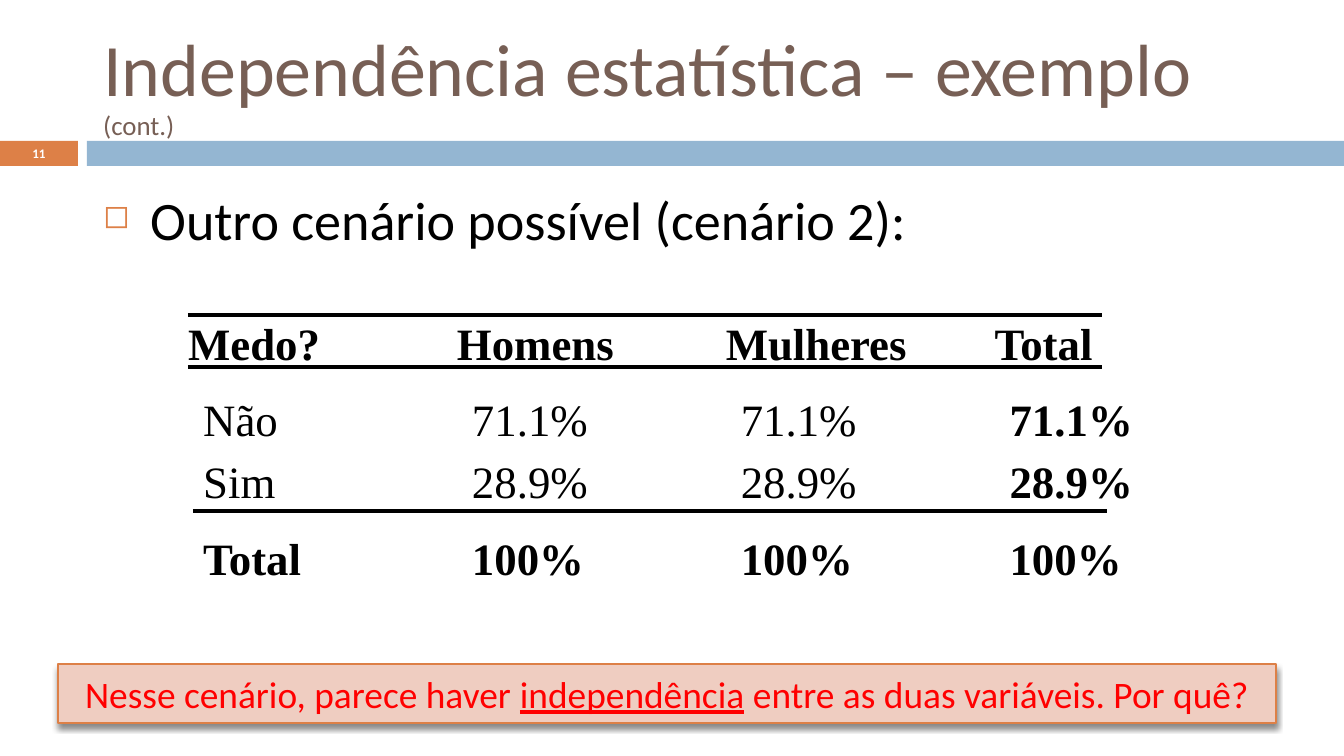
import pptx
import pptx.util
import pptx.dml.color
import pptx.enum.shapes
import pptx.enum.text
import pptx.oxml
import pptx.oxml.ns
from dataclasses import dataclass


@dataclass(frozen=True)
class Theme:
    sans: str = "Calibri"
    serif: str = "Times New Roman"
    title: str = "775F55"
    accent: str = "DD8047"
    band: str = "94B6D2"
    callout: str = "EFCDC1"
    alert: str = "FF0000"
    ink: str = "000000"
    white: str = "FFFFFF"
    title_size: float = 39.6
    cont_size: float = 14.4
    body_size: float = 29
    table_size: float = 24
    callout_size: float = 20
    number_size: float = 7


T = Theme()
PX = 914400 / 134.4
NS = 'xmlns:a="http://schemas.openxmlformats.org/drawingml/2006/main"'
ANCHOR = pptx.enum.text.MSO_ANCHOR
CENTER = pptx.enum.text.PP_ALIGN.CENTER


def box(x, y, w, h, fill=None, top=7):
    at = [round(v * PX) for v in (x, y, w, h)]
    if fill:
        sp = s.shapes.add_shape(pptx.enum.shapes.MSO_SHAPE.RECTANGLE, *at)
        sp.shadow.inherit = False
        sp.fill.solid()
        sp.fill.fore_color.rgb = pptx.dml.color.RGBColor.from_string(fill)
        sp.line.fill.background()
    else:
        sp = s.shapes.add_textbox(*at)
    tf = sp.text_frame
    tf.word_wrap = True
    tf.vertical_anchor = ANCHOR.TOP
    tf.margin_top = round(top * PX)
    return sp


def write(p, text, font, size, color, bold=False):
    r = p.add_run()
    r.text = text
    r.font.name = font
    r.font.size = pptx.util.Pt(size)
    r.font.bold = bold
    r.font.color.rgb = pptx.dml.color.RGBColor.from_string(color)
    return r


prs = pptx.Presentation()
prs.slide_width = round(1344 * PX)
prs.slide_height = round(756 * PX)
s = prs.slides.add_slide(prs.slide_layouts[6])

box(0, 141, 78, 25, T.accent)
box(87, 141, 1257, 25, T.band)

p = box(90, 26, 1199, 109).text_frame.paragraphs[0]
p.line_spacing = 0.9
write(p, "Independência estatística – exemplo ", T.sans, T.title_size, T.title)
write(p, "(cont.)", T.sans, T.cont_size, T.title)

tf = box(0, 140, 78, 27).text_frame
tf.vertical_anchor = ANCHOR.MIDDLE
p = tf.paragraphs[0]
p.alignment = CENTER
write(p, "11", T.sans, T.number_size, T.white, True)

p = box(90, 176, 1199, 496, top=10).text_frame.paragraphs[0]
write(p, "Outro cenário possível (cenário 2):", T.sans, T.body_size, T.ink)
pPr = p._p.get_or_add_pPr()
pPr.set("marL", str(round(47 * PX)))
pPr.set("indent", str(round(-47 * PX)))
for xml in (
    f'<a:buClr {NS}><a:srgbClr val="{T.accent}"/></a:buClr>',
    f'<a:buSzPct {NS} val="60000"/>',
    f'<a:buChar {NS} char="◻"/>',
):
    pPr.append(pptx.oxml.parse_xml(xml))

header = [[("Medo?\t\tHomens\tMulheres\tTotal", True)]]
rows = [
    [("Não\t\t71.1%\t\t71.1%\t\t", False), ("71.1%", True)],
    [("Sim\t\t28.9%\t\t28.9%\t\t", False), ("28.9%", True)],
    [("Total\t\t100%\t\t100%\t\t100%", True)],
]
for at, lines in (((175, 304, 1008, 67), header), ((190, 394, 966, 198), rows)):
    tf = box(*at, top=12).text_frame
    for i, parts in enumerate(lines):
        p = tf.add_paragraph() if i else tf.paragraphs[0]
        p.line_spacing = 0.7 if len(parts) > 1 else 1.0
        p.space_before = pptx.util.Pt(13.3 if i else 0)
        p._p.get_or_add_pPr().set("defTabSz", "914400")
        for text, bold in parts:
            write(p, text, T.serif, T.table_size, T.ink, bold)

for x, y in ((188, 367), (188, 315), (193, 511)):
    ends = [round(v * PX) for v in (x, y, x + 914, y)]
    line = s.shapes.add_connector(pptx.enum.shapes.MSO_CONNECTOR.STRAIGHT, *ends)
    line.line.color.rgb = pptx.dml.color.RGBColor.from_string(T.ink)
    line.line.width = pptx.util.Pt(2.25)
    line._element.spPr.append(pptx.oxml.parse_xml(f"<a:effectLst {NS}/>"))

sp = box(58, 664, 1218, 59, T.callout)
sp.line.color.rgb = pptx.dml.color.RGBColor.from_string(T.accent)
sp.line.width = pptx.util.Pt(0.79)
sp._element.spPr.find(pptx.oxml.ns.qn("a:effectLst")).append(pptx.oxml.parse_xml(
    f'<a:outerShdw {NS} blurRad="38100" dist="30480" dir="5400000" rotWithShape="0">'
    f'<a:srgbClr val="{T.ink}"><a:alpha val="45000"/></a:srgbClr></a:outerShdw>'
))
p = sp.text_frame.paragraphs[0]
p.alignment = CENTER
for text, underline in (
    ("Nesse cenário, parece haver ", False),
    ("independência", True),
    (" entre as duas variáveis. Por quê?", False),
):
    write(p, text, T.sans, T.callout_size, T.alert).font.underline = underline

prs.save("out.pptx")
